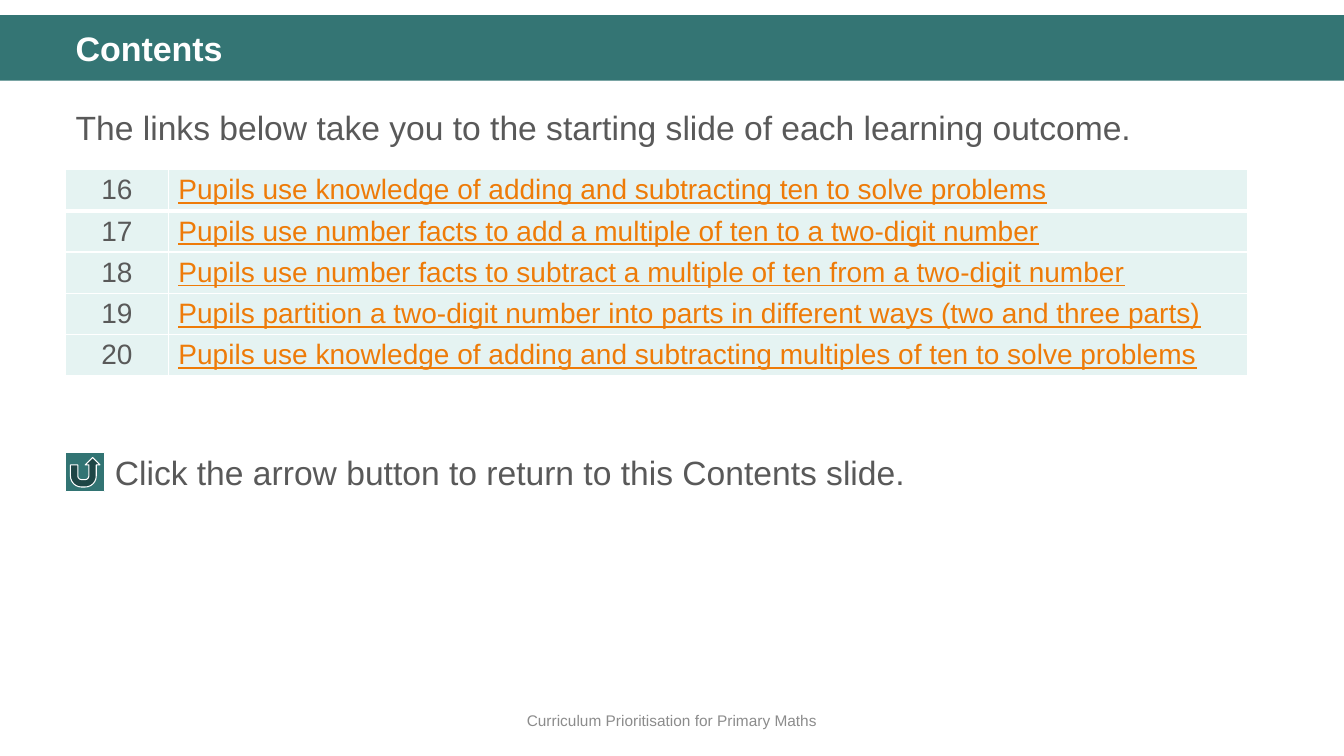
"""Build the Contents slide of a primary maths deck."""
import pptx
import pptx.dml.color
import pptx.enum.shapes
import pptx.enum.text
import pptx.oxml
import pptx.oxml.ns
import pptx.util

Inches = pptx.util.Inches
Pt = pptx.util.Pt
ALIGN = pptx.enum.text.PP_ALIGN
ANCHOR = pptx.enum.text.MSO_ANCHOR
SHAPE = pptx.enum.shapes.MSO_SHAPE

TITLE = "Contents"
INTRODUCTION = "The links below take you to the starting slide of each learning outcome."
FIRST_OUTCOME = 16
OUTCOMES = [
    "Pupils use knowledge of adding and subtracting ten to solve problems",
    "Pupils use number facts to add a multiple of ten to a two-digit number",
    "Pupils use number facts to subtract a multiple of ten from a two-digit number",
    "Pupils partition a two-digit number into parts in different ways (two and three parts)",
    "Pupils use knowledge of adding and subtracting multiples of ten to solve problems",
]
RETURN_HINT = "Click the arrow button to return to this Contents slide."
FOOTER = "Curriculum Prioritisation for Primary Maths"

COLOURS = {
    "band": "347574",
    "button": "327473",
    "cell": "E5F3F2",
    "text": "595959",
    "link": "EE7B08",
    "footer": "8C8C8C",
    "white": "FFFFFF",
}
SLIDE_WIDTH, SLIDE_HEIGHT = 13.33, 7.5
LEFT = 0.65
COLUMN_WIDTHS = (1.02, 10.7)
ROW_HEIGHT = 0.41
BUTTON_SIZE = 0.39


def colour(name):
    return pptx.dml.color.RGBColor.from_string(COLOURS[name])


def write_text(frame, text, size=24, fill="text", bold=False, underline=False,
               align=ALIGN.LEFT, anchor=ANCHOR.TOP, line_spacing=1.0, space_before=0):
    frame.word_wrap = True
    frame.vertical_anchor = anchor
    paragraph = frame.paragraphs[0]
    paragraph.alignment = align
    paragraph.line_spacing = line_spacing
    paragraph.space_before = Pt(space_before)
    run = paragraph.add_run()
    run.text = text
    run.font.name = "Arial"
    run.font.size = Pt(size)
    run.font.bold = bold
    run.font.underline = underline
    run.font.color.rgb = colour(fill)
    return paragraph


def place(shape, left, top, width, height):
    shape.left, shape.top = Inches(left), Inches(top)
    shape.width, shape.height = Inches(width), Inches(height)


def add_shape(slide, kind, left, top, width, height, fill):
    shape = slide.shapes.add_shape(
        kind, Inches(left), Inches(top), Inches(width), Inches(height))
    shape.shadow.inherit = False
    shape.fill.solid()
    shape.fill.fore_color.rgb = colour(fill)
    return shape


def add_text_box(slide, left, top, width, height):
    box = slide.shapes.add_textbox(
        Inches(left), Inches(top), Inches(width), Inches(height))
    return box.text_frame


def set_borders(cell, bottom_width):
    properties = cell._tc.get_or_add_tcPr()
    widths = {"lnL": 1, "lnR": 1, "lnT": 1, "lnB": bottom_width}
    for position, (side, width) in enumerate(widths.items()):
        properties.insert(position, pptx.oxml.parse_xml(
            f'<a:{side} {pptx.oxml.ns.nsdecls("a")} w="{Pt(width)}"><a:solidFill>'
            f'<a:srgbClr val="{COLOURS["white"]}"/></a:solidFill></a:{side}>'))


def add_outcomes(slide):
    frame = slide.shapes.add_table(
        len(OUTCOMES), len(COLUMN_WIDTHS), Inches(LEFT), Inches(1.68),
        Inches(sum(COLUMN_WIDTHS)), Inches(ROW_HEIGHT * len(OUTCOMES)))
    table = frame.table
    table.first_row = False
    table.horz_banding = False
    for column, width in zip(table.columns, COLUMN_WIDTHS):
        column.width = Inches(width)
    for index, (row, outcome) in enumerate(zip(table.rows, OUTCOMES)):
        row.height = Inches(ROW_HEIGHT)
        number_cell, link_cell = row.cells
        for cell in (number_cell, link_cell):
            cell.margin_top = cell.margin_bottom = Inches(0.03)
            cell.vertical_anchor = ANCHOR.MIDDLE
            cell.fill.solid()
            cell.fill.fore_color.rgb = colour("cell")
            set_borders(cell, 3 if index == 0 else 1)
        write_text(number_cell.text_frame, str(FIRST_OUTCOME + index), size=20,
                   align=ALIGN.CENTER, anchor=ANCHOR.MIDDLE)
        write_text(link_cell.text_frame, outcome, size=20, fill="link",
                   underline=True, anchor=ANCHOR.MIDDLE)


def main():
    presentation = pptx.Presentation()
    presentation.slide_width = Inches(SLIDE_WIDTH)
    presentation.slide_height = Inches(SLIDE_HEIGHT)
    slide = presentation.slides.add_slide(presentation.slide_layouts[1])
    title, introduction = slide.placeholders

    band = add_shape(slide, SHAPE.RECTANGLE, 0, 0.15, SLIDE_WIDTH, 0.65, "band")
    band.line.fill.background()
    title.element.addprevious(band.element)

    place(title, LEFT, 0.27, 12.18, 0.47)
    write_text(title.text_frame, TITLE, size=24.3, fill="white", bold=True,
               line_spacing=0.9)
    place(introduction, LEFT, 0.93, 12.18, 3.51)
    paragraph = write_text(introduction.text_frame, INTRODUCTION,
                           line_spacing=1.2, space_before=10)
    for placeholder in (title, introduction):
        placeholder.text_frame.auto_size = pptx.enum.text.MSO_AUTO_SIZE.NONE
    properties = paragraph._p.get_or_add_pPr()
    properties.set("marL", "0")
    properties.set("indent", "0")
    properties.append(pptx.oxml.parse_xml(f'<a:buNone {pptx.oxml.ns.nsdecls("a")}/>'))

    add_outcomes(slide)

    button = add_shape(slide, SHAPE.ACTION_BUTTON_RETURN, LEFT, 4.49,
                       BUTTON_SIZE, BUTTON_SIZE, "button")
    button.line.color.rgb = colour("white")
    button.line.width = Pt(0.75)
    write_text(add_text_box(slide, LEFT + BUTTON_SIZE, 4.43, 11.32, 0.5), RETURN_HINT)
    write_text(add_text_box(slide, 0, 6.95, SLIDE_WIDTH, 0.4), FOOTER, size=11,
               fill="footer", align=ALIGN.CENTER, anchor=ANCHOR.MIDDLE)

    presentation.save("out.pptx")


if __name__ == "__main__":
    main()
